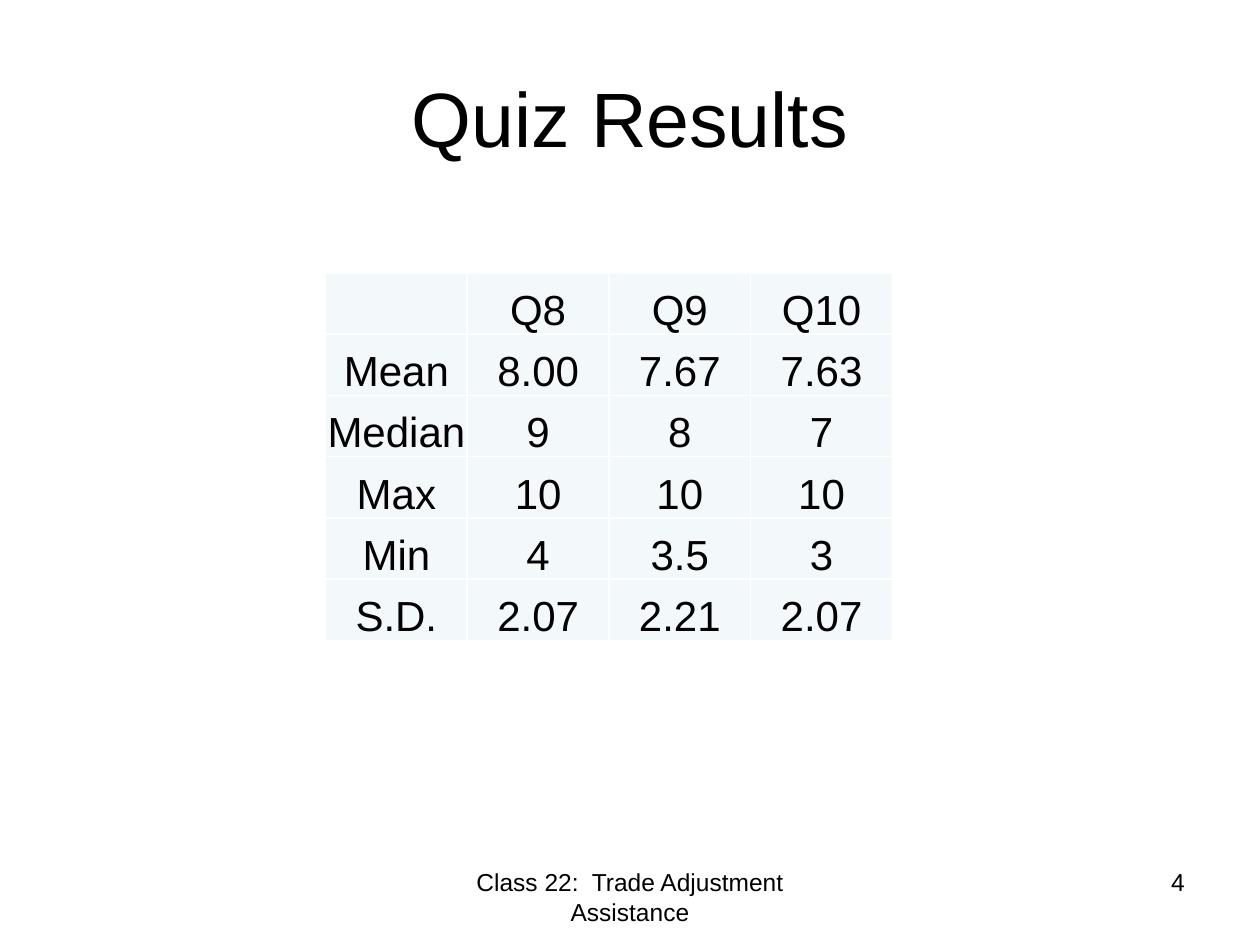
from dataclasses import dataclass

from lxml.etree import SubElement
from pptx import Presentation
from pptx.dml.color import RGBColor as RGB
from pptx.enum.text import MSO_ANCHOR as Anchor, PP_ALIGN as Align
from pptx.oxml.ns import qn
from pptx.util import Inches, Pt


@dataclass(frozen=True)
class Theme:
    font: str = "Arial"
    ink: str = "000000"
    paper: str = "FFFFFF"
    cell: str = "F3F9FA"
    title_size: int = 44
    table_size: int = 24
    footer_size: int = 14
    border: int = 1


class Deck:
    """Draws themed elements on a slide gridded in 120 columns and 90 rows."""

    def __init__(self, theme, columns=120, rows=90):
        self.theme = theme
        self.prs = Presentation()
        self.prs.slide_width, self.prs.slide_height = Inches(10), Inches(7.5)
        self.col = self.prs.slide_width / columns
        self.row = self.prs.slide_height / rows
        self.s = self.prs.slides.add_slide(self.prs.slide_layouts[5])
        fill = self.s.background.fill
        fill.solid()
        fill.fore_color.rgb = RGB.from_string(theme.paper)

    def box(self, x, y, w, h):
        return [round(n) for n in (x * self.col, y * self.row, w * self.col, h * self.row)]

    def set_text(self, tf, text, size, align):
        p = tf.paragraphs[0]
        p.text = text
        p.alignment = align
        p.font.name = self.theme.font
        p.font.size = Pt(size)
        p.font.color.rgb = RGB.from_string(self.theme.ink)

    def title(self, text, *area):
        sp = self.s.shapes.title
        sp.left, sp.top, sp.width, sp.height = self.box(*area)
        sp.text_frame.vertical_anchor = Anchor.MIDDLE
        self.set_text(sp.text_frame, text, self.theme.title_size, Align.CENTER)

    def footer(self, text, align, *area):
        tf = self.s.shapes.add_textbox(*self.box(*area)).text_frame
        tf.word_wrap = True
        self.set_text(tf, text, self.theme.footer_size, align)

    def borders(self, cell):
        tc_pr = cell._tc.get_or_add_tcPr()
        for side in ("lnL", "lnR", "lnT", "lnB"):
            ln = SubElement(tc_pr, qn(f"a:{side}"), w=str(Pt(self.theme.border)))
            fill = SubElement(ln, qn("a:solidFill"))
            SubElement(fill, qn("a:srgbClr"), val=self.theme.paper)

    def table(self, data, *area):
        table = self.s.shapes.add_table(len(data), len(data[0]), *self.box(*area)).table
        table.first_row = table.horz_banding = False
        for i, values in enumerate(data):
            for j, value in enumerate(values):
                cell = table.cell(i, j)
                cell.margin_left = cell.margin_right = cell.margin_top = Inches(0.01)
                cell.margin_bottom = 0
                cell.vertical_anchor = Anchor.BOTTOM
                self.borders(cell)
                cell.fill.solid()
                cell.fill.fore_color.rgb = RGB.from_string(self.theme.cell)
                self.set_text(cell.text_frame, value, self.theme.table_size, Align.CENTER)


def main():
    deck = Deck(Theme())
    deck.title("Quiz Results", 6, 3.6, 108, 15)
    deck.footer("Class 22:  Trade Adjustment Assistance", Align.CENTER, 41, 82, 38, 6.25)
    deck.footer("4", Align.RIGHT, 86, 82, 28, 6.25)
    results = [
        ("", "Q8", "Q9", "Q10"),
        ("Mean", "8.00", "7.67", "7.63"),
        ("Median", "9", "8", "7"),
        ("Max", "10", "10", "10"),
        ("Min", "4", "3.5", "3"),
        ("S.D.", "2.07", "2.21", "2.07"),
    ]
    deck.table(results, 31, 26, 54, 35)
    deck.prs.save("out.pptx")


if __name__ == "__main__":
    main()
